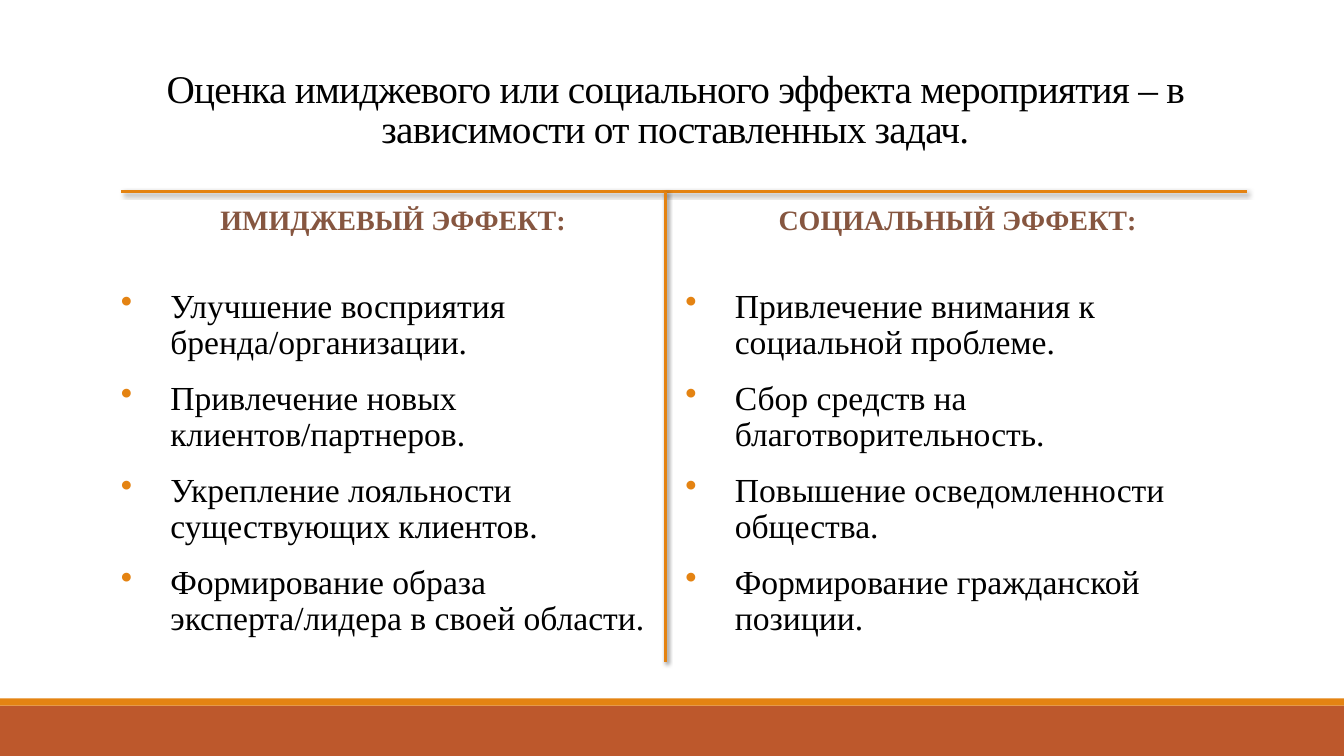
from dataclasses import dataclass

from lxml import etree
from pptx import Presentation
from pptx.dml.color import RGBColor
from pptx.enum.shapes import MSO_CONNECTOR, MSO_SHAPE
from pptx.enum.text import MSO_ANCHOR, PP_ALIGN
from pptx.oxml.ns import qn
from pptx.util import Inches, Length, Pt

LINE, RECT = MSO_CONNECTOR.STRAIGHT, MSO_SHAPE.RECTANGLE
TOP, MIDDLE = MSO_ANCHOR.TOP, MSO_ANCHOR.MIDDLE
LEFT, CENTER = PP_ALIGN.LEFT, PP_ALIGN.CENTER

FONT = "Times New Roman"
BLACK = RGBColor(0x00, 0x00, 0x00)
BROWN = RGBColor(0x86, 0x56, 0x40)
ORANGE = RGBColor(0xE4, 0x83, 0x12)
RUST = RGBColor(0xBD, 0x58, 0x2C)

# Square grid, ten cells to the inch
SLIDE_COLS, SLIDE_ROWS = 133.33, 75
MARGIN, COLUMN, GUTTER = 12, 54, 2
TITLE_ROW, RULE_ROW, LIST_ROW, FOOTER_ROW = 3.1, 19, 28.2, 70
HANGING = 4.9


@dataclass(frozen=True)
class Area:
    col: float
    row: float
    cols: float
    rows: float


@dataclass(frozen=True)
class Style:
    size: int
    color: RGBColor
    align: PP_ALIGN = LEFT
    anchor: MSO_ANCHOR = TOP
    spacing: float = 0.9
    bold: bool = False
    tracking: int = 0
    side_inset: float = 1
    bullets: bool = False


@dataclass(frozen=True)
class Effect:
    heading: str
    points: tuple[str, ...]


TITLE = Style(28, BLACK, CENTER, MIDDLE, spacing=0.85, tracking=-50)
HEADING = Style(20, BROWN, CENTER, MIDDLE, bold=True)
POINTS = Style(24, BLACK, side_inset=0, bullets=True)

TITLE_TEXT = ("Оценка имиджевого или социального эффекта мероприятия – "
              "в зависимости от поставленных задач.")
EFFECTS = (
    Effect("ИМИДЖЕВЫЙ ЭФФЕКТ:", (
        "Улучшение восприятия бренда/организации.",
        "Привлечение новых клиентов/партнеров.",
        "Укрепление лояльности существующих клиентов.",
        "Формирование образа эксперта/лидера в своей области.",
    )),
    Effect("СОЦИАЛЬНЫЙ ЭФФЕКТ:", (
        "Привлечение внимания к социальной проблеме.",
        "Сбор средств на благотворительность.",
        "Повышение осведомленности общества.",
        "Формирование гражданской позиции.",
    )),
)


def cells(count: float) -> Length:
    return Inches(count / 10)


def place(area: Area) -> tuple[Length, ...]:
    return tuple(cells(n) for n in (area.col, area.row, area.cols, area.rows))


def add_bullet(p) -> None:
    pPr = p._p.get_or_add_pPr()
    pPr.set("marL", str(cells(HANGING)))
    pPr.set("indent", str(-cells(HANGING)))
    color = etree.SubElement(pPr, qn("a:buClr"))
    etree.SubElement(color, qn("a:srgbClr"), val=str(ORANGE))
    etree.SubElement(pPr, qn("a:buChar"), char="•")


def add_text(s, area: Area, texts: tuple[str, ...], style: Style) -> None:
    tf = s.shapes.add_textbox(*place(area)).text_frame
    tf.word_wrap = True
    tf.vertical_anchor = style.anchor
    tf.margin_left = tf.margin_right = cells(style.side_inset)
    for i, text in enumerate(texts):
        p = tf.add_paragraph() if i else tf.paragraphs[0]
        if style.bullets:
            add_bullet(p)
        p.alignment = style.align
        p.line_spacing = style.spacing
        if i:
            p.space_before = Pt(12)
        if len(texts) > 1:
            p.space_after = Pt(2)
        r = p.add_run()
        r.text = text
        r.font.name = FONT
        r.font.size = Pt(style.size)
        r.font.bold = style.bold
        r.font.color.rgb = style.color
        if style.tracking:
            r._r.get_or_add_rPr().set("spc", str(style.tracking))


def add_band(s, area: Area, color: RGBColor) -> None:
    sp = s.shapes.add_shape(RECT, *place(area))
    sp.shadow.inherit = False
    sp.fill.solid()
    sp.fill.fore_color.rgb = color
    sp.line.fill.background()


def add_rule(s, area: Area) -> None:
    x, y, w, h = place(area)
    line = s.shapes.add_connector(LINE, x, y, x + w, y + h)
    line.line.color.rgb = ORANGE
    line.line.width = Pt(2)
    effects = etree.SubElement(line._element.spPr, qn("a:effectLst"))
    shadow = etree.SubElement(effects, qn("a:outerShdw"), blurRad=str(Pt(3)),
                              dist=str(Pt(2)), dir="2700000", rotWithShape="0")
    color = etree.SubElement(shadow, qn("a:srgbClr"), val=str(BLACK))
    etree.SubElement(color, qn("a:alpha"), val="60000")


def main() -> None:
    prs = Presentation()
    prs.slide_width, prs.slide_height = cells(SLIDE_COLS), cells(SLIDE_ROWS)
    s = prs.slides.add_slide(prs.slide_layouts[6])

    # Footer bands
    add_band(s, Area(0, FOOTER_ROW, SLIDE_COLS, SLIDE_ROWS - FOOTER_ROW), RUST)
    add_band(s, Area(0, FOOTER_ROW - 0.7, SLIDE_COLS, 0.7), ORANGE)

    # Title
    width = 2 * COLUMN + GUTTER
    add_text(s, Area(MARGIN, TITLE_ROW, width, RULE_ROW - TITLE_ROW),
             (TITLE_TEXT,), TITLE)

    # Two columns of effects
    for i, effect in enumerate(EFFECTS):
        col = MARGIN + i * (COLUMN + GUTTER)
        add_text(s, Area(col, RULE_ROW, COLUMN, 6), (effect.heading,), HEADING)
        add_text(s, Area(col, LIST_ROW, COLUMN, 36.9), effect.points, POINTS)

    # Dividing rules
    add_rule(s, Area(MARGIN, RULE_ROW, 111.7, 0))
    add_rule(s, Area(MARGIN + COLUMN, RULE_ROW, 0, 46.7))

    prs.save("out.pptx")


if __name__ == "__main__":
    main()
